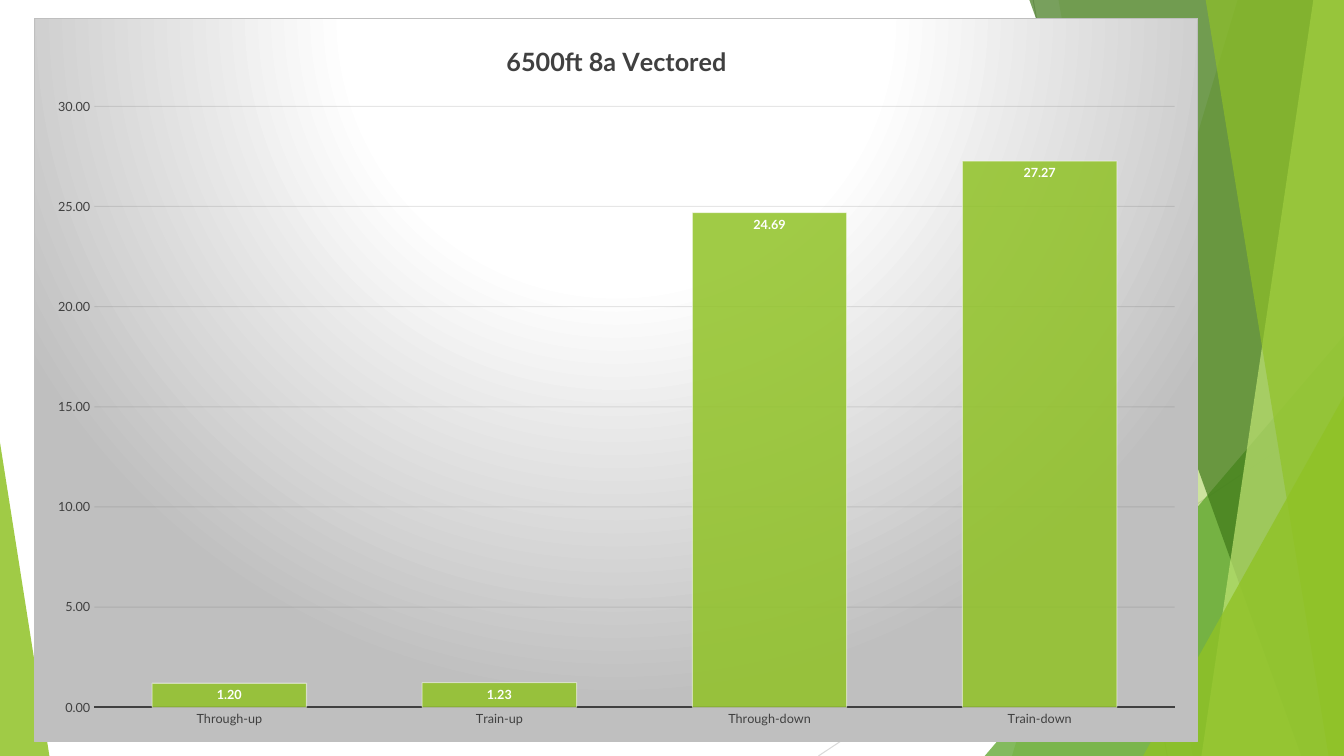
from lxml import etree
from pptx import Presentation
from pptx.chart.data import CategoryChartData
from pptx.dml.color import RGBColor
from pptx.enum.chart import XL_CHART_TYPE, XL_LABEL_POSITION, XL_TICK_MARK
from pptx.enum.shapes import MSO_CONNECTOR, MSO_SHAPE
from pptx.oxml import parse_xml
from pptx.oxml.ns import nsdecls, qn
from pptx.util import Pt

W, H = 960, 540


def paint(fill, color, alpha=100):
    fill.solid()
    fill.fore_color.rgb = RGBColor.from_string(color)
    if alpha < 100:
        clr = fill._xPr.find(qn("a:solidFill")).find(qn("a:srgbClr"))
        etree.SubElement(clr, qn("a:alpha")).set("val", str(alpha * 1000))


def set_font(font, size, color, bold=False):
    font.name, font.size, font.bold = "Lato", Pt(size), bold
    paint(font.fill, color)


prs = Presentation()
prs.slide_width, prs.slide_height = Pt(W), Pt(H)
s = prs.slides.add_slide(prs.slide_layouts[6])
paint(s.background.fill, "FFFFFF")

# Thin background lines
for x1, y1, x2, y2, color in [(738, 0, 833.8, H, "BFBFBF"),
                              (W, 290.2, 584.6, H, "D9D9D9")]:
    line = s.shapes.add_connector(MSO_CONNECTOR.STRAIGHT, Pt(x1), Pt(y1), Pt(x2), Pt(y2))
    line.line.width = Pt(0.75)
    paint(line.line.fill, color)
    etree.SubElement(line._element.spPr, qn("a:effectLst"))

# Green facets: a band is (top-left x, bottom-left x) and runs to the right edge;
# a triangle is (left, top, width, apex) and stands on the bottom edge
facets = [
    ((884.2, 722.9), "90C226", 30),
    ((756, 851.8), "90C226", 20),
    ((703.4, 239.8, 256.6, 1), "54A021", 72),
    ((735.1, 929.5), "3F7819", 70),
    ((938.2, 858.2), "C0E474", 70),
    ((861.1, 949), "90C226", 65),
    ((816.5, 283, 143.5, 1), "90C226", 80),
    ((0, 316.1, 35.3, 0), "90C226", 85),
]
for geometry, color, alpha in facets:
    if len(geometry) == 2:
        top_x, bottom_x = geometry
        outline = s.shapes.build_freeform(Pt(top_x), Pt(-0.6))
        outline.add_line_segments([(Pt(W), Pt(-0.6)), (Pt(W), Pt(H)), (Pt(bottom_x), Pt(H))])
        sp = outline.convert_to_shape()
    else:
        left, top, width, apex = geometry
        sp = s.shapes.add_shape(MSO_SHAPE.ISOSCELES_TRIANGLE,
                                Pt(left), Pt(top), Pt(width), Pt(H - top))
        sp.adjustments[0] = apex
    sp.shadow.inherit = False
    sp.line.fill.background()
    paint(sp.fill, color, alpha)

# Column chart
data = CategoryChartData(number_format="0.00")
data.categories = ["Through-up", "Train-up", "Through-down", "Train-down"]
data.add_series("6500ft 8a Vectored", [1.20, 1.23, 24.69, 27.27])
chart = s.shapes.add_chart(XL_CHART_TYPE.COLUMN_CLUSTERED, Pt(24.5), Pt(13),
                           Pt(831.6), Pt(517), data).chart
chart.has_legend = False
set_font(chart.font, 10, "000000")
chart.has_title = True
chart.chart_title.include_in_layout = False
p = chart.chart_title.text_frame.paragraphs[0]
p.text = "6500ft 8a Vectored"
set_font(p.font, 18, "404040", True)

# Chart background and border
chart_area = parse_xml(f"""<c:spPr {nsdecls("c", "a")}>
  <a:gradFill><a:gsLst>
    <a:gs pos="0"><a:srgbClr val="FFFFFF"/></a:gs>
    <a:gs pos="39000"><a:srgbClr val="FFFFFF"/></a:gs>
    <a:gs pos="100000"><a:srgbClr val="BFBFBF"/></a:gs>
  </a:gsLst><a:path path="circle">
    <a:fillToRect l="50000" t="-80000" r="50000" b="180000"/>
  </a:path></a:gradFill>
  <a:ln w="9525"><a:solidFill><a:srgbClr val="BFBFBF"/></a:solidFill></a:ln>
</c:spPr>""")
chart.element.find(qn("c:chart")).addnext(chart_area)

# Axes
for axis in (chart.category_axis, chart.value_axis):
    axis.major_tick_mark = axis.minor_tick_mark = XL_TICK_MARK.NONE
    set_font(axis.tick_labels.font, 9, "404040")
chart.category_axis.format.line.width = Pt(1.5)
paint(chart.category_axis.format.line.fill, "404040")
axis = chart.value_axis
axis.minimum_scale, axis.maximum_scale, axis.major_unit = 0, 30, 5
axis.format.line.fill.background()
axis.tick_labels.number_format = "0.00"
axis.tick_labels.number_format_is_linked = False
axis.has_major_gridlines = True
axis.major_gridlines.format.line.width = Pt(0.75)
paint(axis.major_gridlines.format.line.fill, "0D0D0D", 10)

# Columns and their labels
plot = chart.plots[0]
plot.gap_width, plot.overlap, plot.vary_by_categories = 75, 40, False
series = plot.series[0]
paint(series.format.fill, "90C226", 85)
series.format.line.width = Pt(0.75)
paint(series.format.line.fill, "FFFFFF", 50)
labels = series.data_labels
labels.show_value = True
labels.position = XL_LABEL_POSITION.INSIDE_END
labels.number_format, labels.number_format_is_linked = "0.00", False
set_font(labels.font, 9, "FFFFFF", True)

prs.save("out.pptx")
